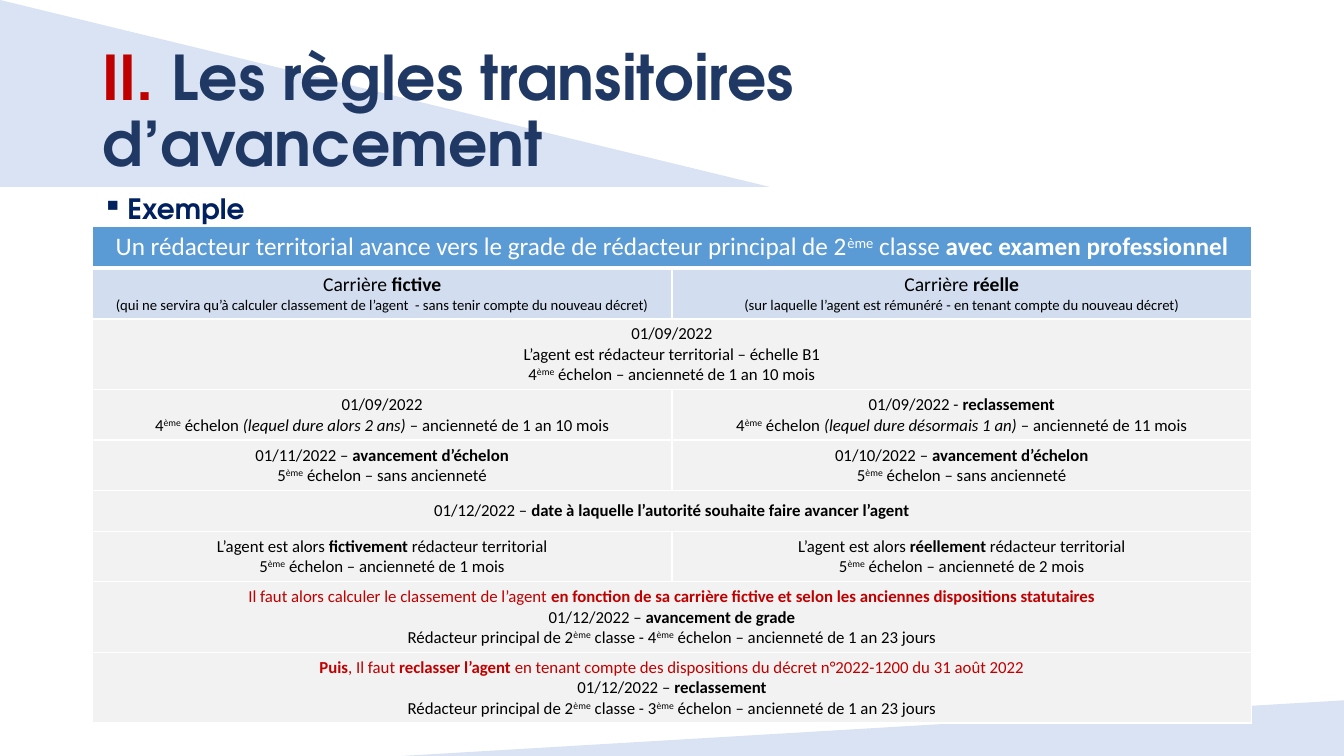
import pptx
import pptx.util
import pptx.dml.color
import pptx.enum.shapes
import pptx.enum.text
import pptx.oxml
import pptx.oxml.ns

PX = 9525  # 1280 x 720 px slide
HEAD_FONT, BODY_FONT = "TeX Gyre Adventor", "Calibri"
RED, NAVY, PALE, GREY = "C00000", "203864", "DAE3F3", "F2F2F2"
ALIGN = pptx.enum.text.PP_ALIGN
ANCHOR = pptx.enum.text.MSO_ANCHOR
qn = pptx.oxml.ns.qn
NS = pptx.oxml.ns.nsdecls("a")


def px(n):
    return pptx.util.Emu(n * PX)


def rgb(value):
    return pptx.dml.color.RGBColor.from_string(value)


def add_run(p, text, size=12, font=BODY_FONT, color="000000",
            bold=False, italic=False, sup=False):
    r = p.add_run()
    r.text = text
    f = r.font
    f.size, f.name, f.bold, f.italic = pptx.util.Pt(size), font, bold, italic
    f.color.rgb = rgb(color)
    if sup:
        r._r.get_or_add_rPr().set("baseline", "30000")


def add_marked(p, text, size=12, color="000000"):
    """Marks switch a format on and off: * bold, _ italic, ^ superscript, # red."""
    on = dict.fromkeys("*_^#", False)
    piece = ""
    for ch in text + "*":
        if ch not in on:
            piece += ch
            continue
        if piece:
            add_run(p, piece, size, color=RED if on["#"] else color,
                    bold=on["*"], italic=on["_"], sup=on["^"])
        piece = ""
        on[ch] = not on[ch]


class Deck:
    def __init__(self):
        self.prs = pptx.Presentation()
        self.prs.slide_width, self.prs.slide_height = px(1280), px(720)
        self.s = self.prs.slides.add_slide(self.prs.slide_layouts[5])

    def triangle(self, x, y, w, h, flip=False):
        sp = self.s.shapes.add_shape(
            pptx.enum.shapes.MSO_SHAPE.RIGHT_TRIANGLE, px(x), px(y), px(w), px(h))
        sp.shadow.inherit = False
        sp.fill.solid()
        sp.fill.fore_color.rgb = rgb(PALE)
        sp.line.fill.background()
        if flip:
            sp._element.spPr.find(qn("a:xfrm")).set("flipH", "1")
        self.s.shapes._spTree.insert(2, sp._element)  # behind the title

    def title(self, x, y, w, h, number, text):
        sp = self.s.shapes.title
        sp.left, sp.top, sp.width, sp.height = px(x), px(y), px(w), px(h)
        tf = sp.text_frame
        tf.word_wrap = True
        tf.auto_size = pptx.enum.text.MSO_AUTO_SIZE.NONE
        tf.vertical_anchor = ANCHOR.MIDDLE
        p = tf.paragraphs[0]
        p.alignment, p.line_spacing = ALIGN.LEFT, 0.9
        add_run(p, number, 44, HEAD_FONT, RED, bold=True)
        add_run(p, text, 44, HEAD_FONT, NAVY, bold=True)

    def bullet(self, x, y, w, h, text):
        tf = self.s.shapes.add_textbox(px(x), px(y), px(w), px(h)).text_frame
        tf.word_wrap = True
        p = tf.paragraphs[0]
        p.alignment = ALIGN.JUSTIFY
        p.space_before = p.space_after = pptx.util.Pt(6)
        add_run(p, text, 20, HEAD_FONT, "002060", bold=True)
        pPr = p._p.get_or_add_pPr()
        pPr.set("marL", str(px(24)))
        pPr.set("indent", str(px(-24)))
        pPr.append(pptx.oxml.parse_xml(f'<a:buChar {NS} char="▪"/>'))

    def cell(self, cell, lines, fill, sizes, color, top, bottom):
        cell.fill.solid()
        cell.fill.fore_color.rgb = rgb(fill)
        tcPr = cell._tc.get_or_add_tcPr()
        for i, (side, pt) in enumerate(zip("LRTB", (1, 1, top, bottom))):
            tcPr.insert(i, pptx.oxml.parse_xml(
                f'<a:ln{side} {NS} w="{pt * 12700}"><a:solidFill>'
                f'<a:srgbClr val="FFFFFF"/></a:solidFill></a:ln{side}>'))
        tf = cell.text_frame
        for i, line in enumerate(lines):
            p = tf.add_paragraph() if i else tf.paragraphs[0]
            p.alignment = ALIGN.CENTER
            add_marked(p, line, sizes[min(i, len(sizes) - 1)], color)

    def table(self, x, y, w, h, row_h, rows):
        table = self.s.shapes.add_table(
            len(rows), 2, px(x), px(y), px(w), px(h)).table
        table.first_row = table.horz_banding = False
        looks = {0: ("5B9BD5", (18,), "FFFFFF"), 1: ("D2DEEF", (14, 10.5), "000000")}
        for n, row in enumerate(rows):
            table.rows[n].height = px(row_h)
            if len(row) == 1:
                table.cell(n, 0).merge(table.cell(n, 1))
            fill, sizes, color = looks.get(n, (GREY, (12,), "000000"))
            for c in range(2):
                self.cell(table.cell(n, c), row[c] if c < len(row) else [], fill,
                          sizes, color, 3 if n == 1 else 1, 3 if n == 0 else 1)
        return table


ROWS = [
    [["Un rédacteur territorial avance vers le grade de rédacteur principal "
      "de 2^ème^ classe *avec examen professionnel*"]],
    [["Carrière *fictive*",
      "(qui ne servira qu’à calculer classement de l’agent  - sans tenir compte du nouveau décret)"],
     ["Carrière *réelle*",
      "(sur laquelle l’agent est rémunéré - en tenant compte du nouveau décret)"]],
    [["01/09/2022", "L’agent est rédacteur territorial – échelle B1",
      "4^ème^ échelon – ancienneté de 1 an 10 mois"]],
    [["01/09/2022",
      "4^ème^ échelon _(lequel dure alors 2 ans)_ – ancienneté de 1 an 10 mois"],
     ["01/09/2022 - *reclassement*",
      "4^ème^ échelon _(lequel dure désormais 1 an)_ – ancienneté de 11 mois"]],
    [[f"01/{month}/2022 – *avancement d’échelon*", "5^ème^ échelon – sans ancienneté"]
     for month in (11, 10)],
    [["01/12/2022 – *date à laquelle l’autorité souhaite faire avancer l’agent*"]],
    [[f"L’agent est alors *{how}* rédacteur territorial",
      f"5^ème^ échelon – ancienneté de {months} mois"]
     for how, months in (("fictivement", 1), ("réellement", 2))],
    [["#Il faut alors calculer le classement de l’agent *en fonction de sa carrière "
      "fictive et selon les anciennes dispositions statutaires*#",
      "01/12/2022 – *avancement de grade*",
      "Rédacteur principal de 2^ème^ classe - 4^ème^ échelon – ancienneté de 1 an 23 jours"]],
    [["#*Puis*, Il faut *reclasser l’agent* en tenant compte des dispositions "
      "du décret n°2022-1200 du 31 août 2022#",
      "01/12/2022 – *reclassement*",
      "Rédacteur principal de 2^ème^ classe - 3^ème^ échelon – ancienneté de 1 an 23 jours"]],
]


def main():
    deck = Deck()
    # Background wedges
    deck.triangle(383, 667, 897, 53, flip=True)
    deck.triangle(0, 0, 733, 178)
    # Heading
    deck.title(88, 38, 1104, 140, "II. ", "Les règles transitoires d’avancement")
    deck.bullet(88, 178, 1104, 471, "Exemple")
    # Career comparison
    table = deck.table(88, 216, 1104, 472, 39, ROWS)
    date_cell = table.cell(5, 0)
    date_cell.vertical_anchor = ANCHOR.MIDDLE
    date_cell.text_frame.paragraphs[0].space_before = pptx.util.Pt(6)
    deck.prs.save("out.pptx")


if __name__ == "__main__":
    main()
